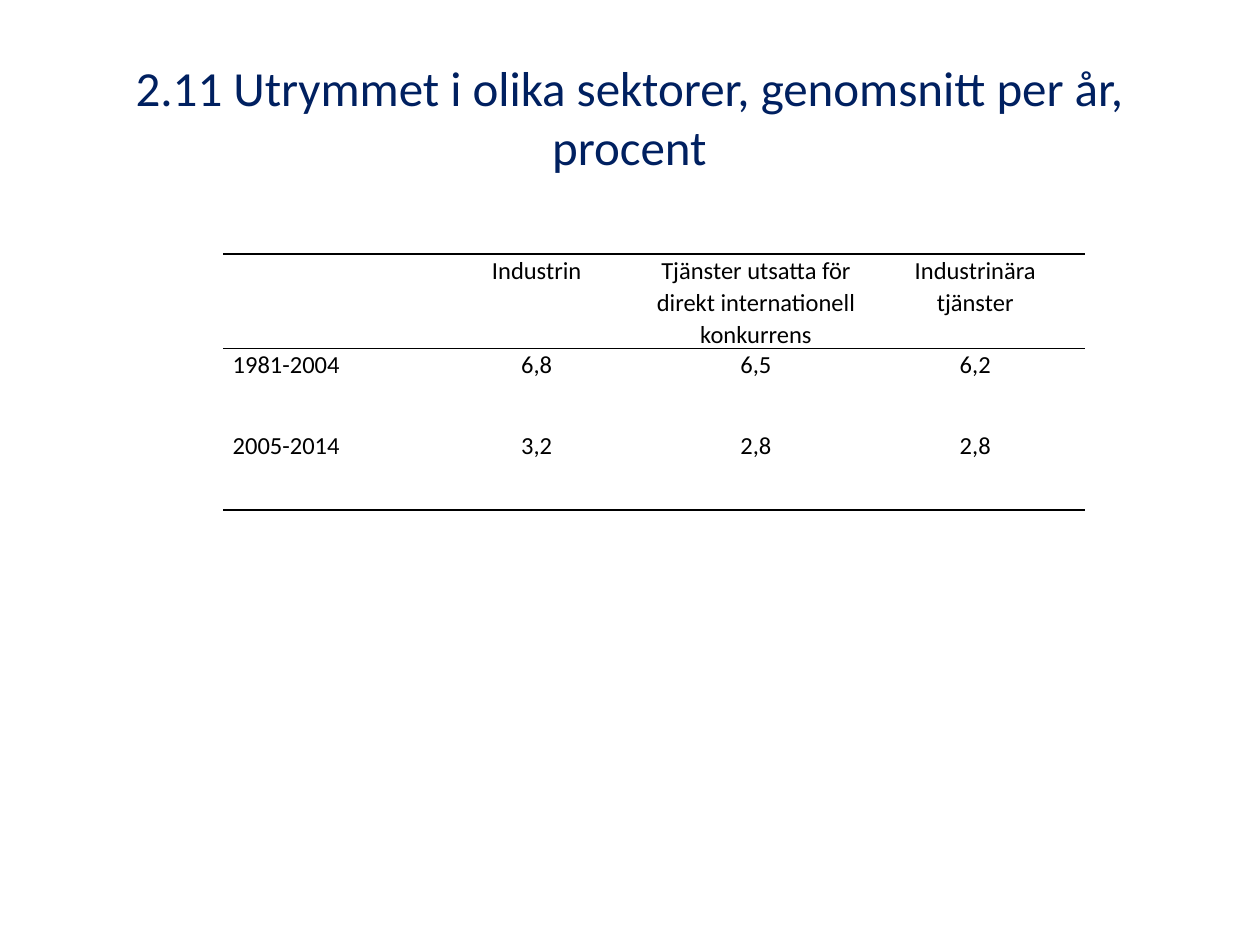
from lxml import etree
from pptx import Presentation
from pptx.dml.color import RGBColor
from pptx.enum import text
from pptx.oxml import ns
from pptx.util import Cm, Pt

TITLE = "2.11 Utrymmet i olika sektorer, genomsnitt per år, procent"
ROWS = [
    ["", "Industrin", "Tjänster utsatta för direkt internationell konkurrens", "Industrinära tjänster"],
    ["1981-2004", "6,8", "6,5", "6,2"],
    ["2005-2014", "3,2", "2,8", "2,8"],
]
COLUMN_WIDTHS = [Cm(4.11)] + [Cm(4.42)] * 3
ROW_HEIGHTS = [Cm(1.6)] + [Cm(1.63)] * 2
RULE_COLOR, RULE_WIDTH = "000000", Pt(1)
RULED_EDGES = [("lnT", "lnB"), ("lnT",), ("lnB",)]

TITLE_FONT = {"name": "Calibri", "size": Pt(28), "color": "002060"}
CELL_FONT = {"name": "Calibri", "size": Pt(14), "color": "000000", "bold": False}
CELL_SPACING = {"line_spacing": 1.07, "space_after": Pt(8)}
CELL_MARGINS = {"margin_left": Cm(0.19), "margin_right": Cm(0.19),
                "margin_top": 0, "margin_bottom": 0}


def set_all(target, values):
    for name, value in values.items():
        if name == "color":
            target.color.rgb = RGBColor.from_string(value)
        else:
            setattr(target, name, value)


def write(frame, content, font, align, spacing):
    paragraph = frame.paragraphs[0]
    paragraph.alignment = align
    set_all(paragraph, spacing)
    run = paragraph.add_run()
    run.text = content
    set_all(run.font, font)


def rule_edges(cell, ruled):
    """Draw the ruled edges of a cell and clear the other ones."""
    properties = cell._tc.get_or_add_tcPr()
    for place, edge in enumerate(("lnL", "lnR", "lnT", "lnB")):
        line = etree.Element(ns.qn(f"a:{edge}"), w=str(int(RULE_WIDTH)))
        if edge in ruled:
            fill = etree.SubElement(line, ns.qn("a:solidFill"))
            etree.SubElement(fill, ns.qn("a:srgbClr"), val=RULE_COLOR)
        else:
            etree.SubElement(line, ns.qn("a:noFill"))
        properties.insert(place, line)


def add_title(slide):
    frame = slide.shapes.add_textbox(Cm(1.27), Cm(0.76), Cm(22.84), Cm(3.18)).text_frame
    frame.word_wrap = True
    frame.vertical_anchor = text.MSO_ANCHOR.MIDDLE
    write(frame, TITLE, TITLE_FONT, text.PP_ALIGN.CENTER, {})


def add_sector_table(slide):
    table = slide.shapes.add_table(
        len(ROWS), len(COLUMN_WIDTHS), Cm(4.5), Cm(5.12),
        sum(COLUMN_WIDTHS), sum(ROW_HEIGHTS)).table
    set_all(table, {"first_row": False, "horz_banding": False})
    for column, width in zip(table.columns, COLUMN_WIDTHS):
        column.width = width
    for row, height, values, ruled in zip(table.rows, ROW_HEIGHTS, ROWS, RULED_EDGES):
        row.height = height
        for index, (cell, value) in enumerate(zip(row.cells, values)):
            cell.fill.background()
            rule_edges(cell, ruled)
            set_all(cell, CELL_MARGINS)
            if value:
                align = text.PP_ALIGN.CENTER if index else text.PP_ALIGN.LEFT
                write(cell.text_frame, value, CELL_FONT, align, CELL_SPACING)


def main():
    deck = Presentation()
    set_all(deck, {"slide_width": Cm(25.4), "slide_height": Cm(19.05)})
    slide = deck.slides.add_slide(deck.slide_layouts[6])
    add_title(slide)
    add_sector_table(slide)
    deck.save("out.pptx")


if __name__ == "__main__":
    main()
